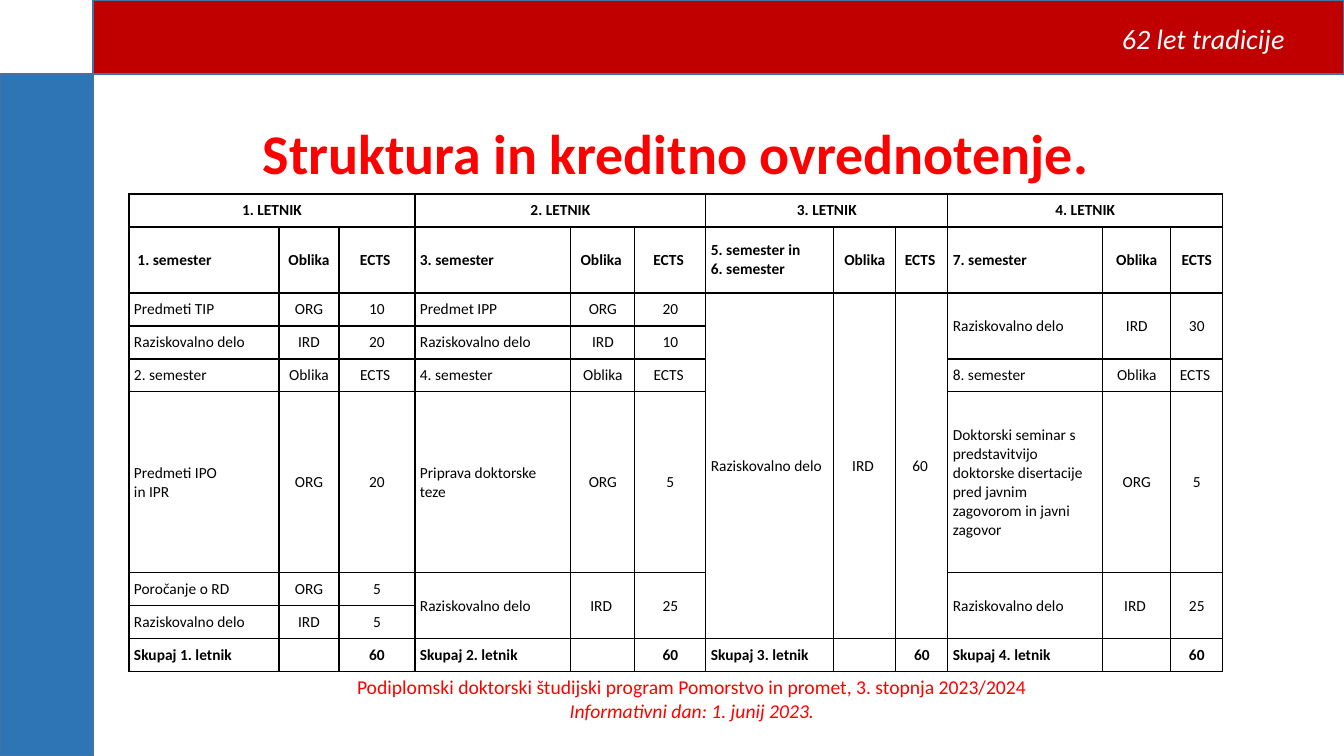
from lxml.etree import SubElement
from pptx import Presentation
from pptx.dml.color import RGBColor
from pptx.enum.shapes import MSO_SHAPE
from pptx.enum.text import MSO_ANCHOR, MSO_AUTO_SIZE, PP_ALIGN
from pptx.oxml.ns import qn
from pptx.util import Emu, Pt

W, H = 1344, 756
SCALE = 12192000 / W
FONT = "Calibri"
RED = RGBColor(0xFF, 0x00, 0x00)
DARK_RED = RGBColor(0xC0, 0x00, 0x00)
BLUE = RGBColor(0x2E, 0x75, 0xB6)
EDGE = RGBColor(0x43, 0x73, 0x9E)
BLACK = RGBColor(0x00, 0x00, 0x00)
WHITE = RGBColor(0xFF, 0xFF, 0xFF)

COLS = [150, 60, 76, 156, 64, 71, 128, 62, 52, 155, 68, 52]
ROWS = [33, 66, 33, 33, 33, 181, 33, 33, 33]
BOLD_ROWS = (0, 1, 8)

# Each entry: first row, rows spanned, subject, form, credits.
YEARS = [
    ("1. LETNIK", [
        (1, 1, " 1. semester", "Oblika", "ECTS "),
        (2, 1, "Predmeti TIP", "ORG", "10"),
        (3, 1, "Raziskovalno delo", "IRD", "20"),
        (4, 1, "2. semester", "Oblika", "ECTS "),
        (5, 1, "Predmeti IPO\nin IPR", "ORG", "20"),
        (6, 1, "Poročanje o RD", "ORG", "5"),
        (7, 1, "Raziskovalno delo", "IRD", "5"),
        (8, 1, "Skupaj 1. letnik", "", "60"),
    ]),
    ("2. LETNIK", [
        (1, 1, "3. semester", "Oblika ", "ECTS "),
        (2, 1, "Predmet IPP", "ORG", "20"),
        (3, 1, "Raziskovalno delo", "IRD", "10"),
        (4, 1, "4. semester", "Oblika", "ECTS "),
        (5, 1, "Priprava doktorske teze", "ORG", "5"),
        (6, 2, "Raziskovalno delo ", "IRD ", "25"),
        (8, 1, "Skupaj 2. letnik", "", "60"),
    ]),
    ("3. LETNIK", [
        (1, 1, "5. semester in\n6. semester", "Oblika", "ECTS "),
        (2, 6, "Raziskovalno delo", "IRD ", "60 "),
        (8, 1, "Skupaj 3. letnik", "", "60"),
    ]),
    ("4. LETNIK", [
        (1, 1, "7. semester", "Oblika", "ECTS"),
        (2, 2, "Raziskovalno delo", "IRD", "30"),
        (4, 1, "8. semester", "Oblika", "ECTS "),
        (5, 1, "Doktorski seminar s predstavitvijo doktorske disertacije "
               "pred javnim zagovorom in javni zagovor", "ORG", "5"),
        (6, 2, "Raziskovalno delo", "IRD ", "25"),
        (8, 1, "Skupaj 4. letnik", "", "60"),
    ]),
]


def px(n):
    """Turn px into EMU."""
    return Emu(round(n * SCALE))


def add_run(p, text, size, color, bold=False, italic=False):
    """Add one formatted run to a paragraph."""
    r = p.add_run()
    r.text = text
    r.font.name, r.font.size = FONT, Pt(size)
    r.font.bold, r.font.italic = bold, italic
    r.font.color.rgb = color


def add_bar(s, x, y, w, h, color):
    """Draw a filled bar with a thin edge."""
    sp = s.shapes.add_shape(MSO_SHAPE.RECTANGLE, px(x), px(y), px(w), px(h))
    sp.shadow.inherit = False
    sp.fill.solid()
    sp.fill.fore_color.rgb = color
    sp.line.color.rgb = EDGE
    sp.line.width = Pt(1)


def add_title(s, x, y, w, h):
    """Place and format the title placeholder."""
    sp = s.shapes.title
    sp.left, sp.top, sp.width, sp.height = px(x), px(y), px(w), px(h)
    tf = sp.text_frame
    tf.auto_size = MSO_AUTO_SIZE.NONE
    tf.vertical_anchor = MSO_ANCHOR.TOP
    p = tf.paragraphs[0]
    p.alignment, p.line_spacing = PP_ALIGN.CENTER, 0.9
    add_run(p, "Struktura in kreditno ovrednotenje.", 40, RED, bold=True)


def style_cell(cell):
    """Give a cell black borders, narrow insets and no fill."""
    tc_pr = cell._tc.get_or_add_tcPr()
    for side in ("a:lnL", "a:lnR", "a:lnT", "a:lnB"):
        ln = SubElement(tc_pr, qn(side), w=str(Pt(1)))
        fill = SubElement(ln, qn("a:solidFill"))
        SubElement(fill, qn("a:srgbClr"), val=str(BLACK))
    cell.fill.background()
    cell.vertical_anchor = MSO_ANCHOR.MIDDLE
    cell.margin_left = cell.margin_right = px(5)
    cell.margin_top = cell.margin_bottom = 0


def fill_cell(cell, text, align, bold):
    """Write a cell's text, one paragraph a line."""
    tf = cell.text_frame
    for i, line in enumerate(text.split("\n") if text else []):
        p = tf.add_paragraph() if i else tf.paragraphs[0]
        p.alignment = align
        add_run(p, line, 11, BLACK, bold=bold)


def add_credit_table(s, x, y):
    """Build the table of credits, three columns for each year."""
    table = s.shapes.add_table(len(ROWS), len(COLS), px(x), px(y),
                               px(sum(COLS)), px(sum(ROWS))).table
    table.first_row = table.horz_banding = False
    for col, w in zip(table.columns, COLS):
        col.width = px(w)
    for row, h in zip(table.rows, ROWS):
        row.height = px(h)
    for cell in table.iter_cells():
        style_cell(cell)
    for i, (year, entries) in enumerate(YEARS):
        left = 3 * i
        table.cell(0, left).merge(table.cell(0, left + 2))
        fill_cell(table.cell(0, left), year, PP_ALIGN.CENTER, True)
        for top, span, *texts in entries:
            for j, text in enumerate(texts):
                cell = table.cell(top, left + j)
                if span > 1:
                    cell.merge(table.cell(top + span - 1, left + j))
                align = PP_ALIGN.CENTER if j else PP_ALIGN.LEFT
                fill_cell(cell, text, align, top in BOLD_ROWS)


def add_tradition(s, x, y, w, h):
    """Add the caption in the top bar."""
    tf = s.shapes.add_textbox(px(x), px(y), px(w), px(h)).text_frame
    tf.word_wrap = False
    tf.auto_size = MSO_AUTO_SIZE.SHAPE_TO_FIT_TEXT
    add_run(tf.paragraphs[0], "62 let tradicije", 20, WHITE, italic=True)


def add_footer(s, x, y, w, h):
    """Add the programme and date below the table."""
    tf = s.shapes.add_textbox(px(x), px(y), px(w), px(h)).text_frame
    tf.word_wrap = True
    p = tf.paragraphs[0]
    p.alignment = PP_ALIGN.CENTER
    add_run(p, "Podiplomski doktorski študijski program Pomorstvo in promet, "
               "3. stopnja 2023/2024 ", 14, RED)
    add_run(p, "Informativni dan: 1. junij 2023.", 14, RED, italic=True)


def main():
    """Build the slide and save it."""
    prs = Presentation()
    prs.slide_width, prs.slide_height = px(W), px(H)
    s = prs.slides.add_slide(prs.slide_layouts[5])
    bar_x, bar_h = 93, 74
    add_title(s, 113, 121, 1125, 609)
    add_credit_table(s, 129, 194)
    add_bar(s, bar_x, 0, W - bar_x, bar_h, DARK_RED)
    add_tradition(s, 1112, 17, 184, 44)
    add_bar(s, 0, bar_h, bar_x, H - bar_h, BLUE)
    add_footer(s, 337, 670, 710, 40)
    prs.save("out.pptx")


if __name__ == "__main__":
    main()
